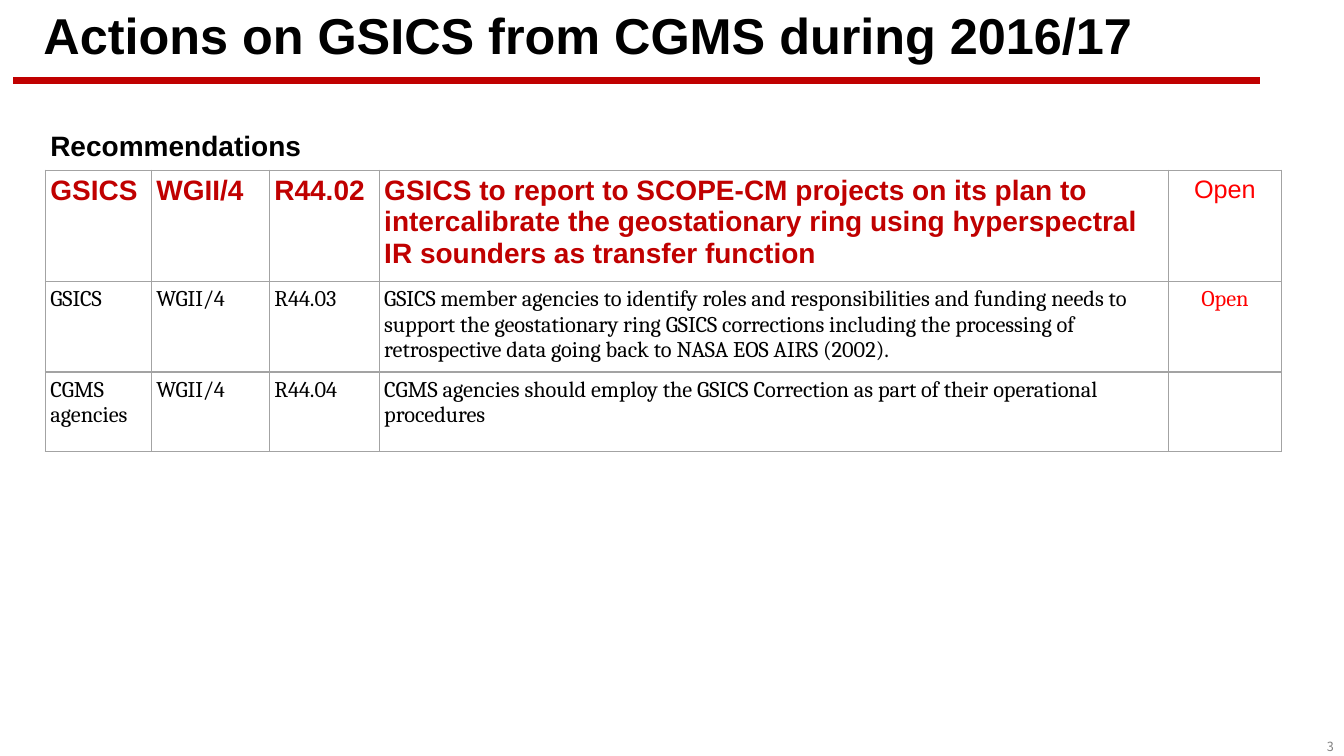
from collections import namedtuple
from lxml import etree
from pptx import Presentation, util as u
from pptx.dml import color
from pptx.enum import shapes, text
from pptx.oxml import ns

Box = namedtuple("Box", "left top width height")
Style = namedtuple("Style", "size font color bold")

SLIDE_WIDTH, SLIDE_HEIGHT = u.Inches(13.33), u.Inches(7.5)
GRID = 100
RED, BRIGHT_RED, BLACK, GREY, BORDER = "C00000", "FF0000", "000000", "808080", "A3A3A3"

HEADING = Style(36, "Arial", BLACK, True)
CAPTION = Style(20, "Arial", BLACK, True)
NUMBER = Style(9, "Noto Sans CJK KR", GREY, False)
KEY = Style(20, "Arial", RED, True)
KEY_STATUS = Style(18, "Arial", BRIGHT_RED, False)
BODY = Style(16, "Cambria", BLACK, False)
BODY_STATUS = BODY._replace(color=BRIGHT_RED)

COLUMN_WIDTHS = [7.88, 8.78, 8.18, 58.73, 8.4]
ROW_HEIGHTS = [13.87, 11.6, 10.53]
ROW_STYLES = [(KEY, KEY_STATUS), (BODY, BODY_STATUS), (BODY, BODY_STATUS)]
RECOMMENDATIONS = [
    ["GSICS", "WGII/4", "R44.02",
     "GSICS to report to SCOPE-CM projects on its plan to intercalibrate the "
     "geostationary ring using hyperspectral IR sounders as transfer function", "Open"],
    ["GSICS", "WGII/4", "R44.03",
     "GSICS member agencies to identify roles and responsibilities and funding needs to "
     "support the geostationary ring GSICS corrections including the processing of "
     "retrospective data going back to NASA EOS AIRS (2002).", "Open"],
    ["CGMS agencies", "WGII/4", "R44.04",
     "CGMS agencies should employ the GSICS Correction as part of their operational "
     "procedures", ""],
]


def across(columns):
    return round(SLIDE_WIDTH * columns / GRID)


def down(rows):
    return round(SLIDE_HEIGHT * rows / GRID)


def place(box):
    return across(box.left), down(box.top), across(box.width), down(box.height)


def rgb(value):
    return color.RGBColor.from_string(value)


def write(text_frame, words, style, align=text.PP_ALIGN.LEFT):
    text_frame.text = words
    text_frame.word_wrap = True
    paragraph = text_frame.paragraphs[0]
    paragraph.alignment = align
    for target in [paragraph, *paragraph.runs]:
        target.font.size = u.Pt(style.size)
        target.font.name = style.font
        target.font.bold = style.bold
        target.font.color.rgb = rgb(style.color)
    return paragraph


def add_label(slide, box, words, style, align=text.PP_ALIGN.LEFT):
    label = slide.shapes.add_textbox(*place(box))
    write(label.text_frame, words, style, align)


def border_cell(cell):
    properties = cell._tc.get_or_add_tcPr()
    for position, side in enumerate(["a:lnL", "a:lnR", "a:lnT", "a:lnB"]):
        line = etree.Element(ns.qn(side), w=str(u.Pt(1)))
        fill = etree.SubElement(line, ns.qn("a:solidFill"))
        etree.SubElement(fill, ns.qn("a:srgbClr"), val=BORDER)
        properties.insert(position, line)


def add_header(slide, box):
    title = slide.shapes.title
    title.left, title.top, title.width, title.height = place(
        Box(box.left + 1.5, box.top, box.width - 6.5, box.height - 1.6))
    title.text_frame.auto_size = text.MSO_AUTO_SIZE.NONE
    title.text_frame.vertical_anchor = text.MSO_ANCHOR.MIDDLE
    paragraph = write(title.text_frame, "Actions on GSICS from CGMS during 2016/17", HEADING)
    paragraph.line_spacing = 0.9

    bottom = down(box.top + box.height)
    rule = slide.shapes.add_connector(
        shapes.MSO_CONNECTOR.STRAIGHT, across(box.left), bottom,
        across(box.left + box.width), bottom)
    rule.line.color.rgb = rgb(RED)
    rule.line.width = u.Pt(4.5)
    etree.SubElement(rule._element.spPr, ns.qn("a:effectLst"))


def add_recommendations(slide, box):
    add_label(slide, Box(box.left, box.top, 32.78, 5.87), "Recommendations", CAPTION)
    table_box = Box(box.left + 0.38, box.top + 6.13, sum(COLUMN_WIDTHS), sum(ROW_HEIGHTS))
    table = slide.shapes.add_table(
        len(ROW_HEIGHTS), len(COLUMN_WIDTHS), *place(table_box)).table
    table.first_row = table.horz_banding = False
    for column, width in zip(table.columns, COLUMN_WIDTHS):
        column.width = across(width)
    for row, height, entries, styles in zip(
            table.rows, ROW_HEIGHTS, RECOMMENDATIONS, ROW_STYLES):
        row.height = down(height)
        for index, (cell, words) in enumerate(zip(row.cells, entries)):
            is_status = index == len(entries) - 1
            align = text.PP_ALIGN.CENTER if is_status else text.PP_ALIGN.LEFT
            cell.fill.background()
            cell.margin_left = cell.margin_right = u.Inches(0.05)
            cell.margin_top = cell.margin_bottom = u.Inches(0.05)
            write(cell.text_frame, words, styles[is_status], align)
            border_cell(cell)


def add_slide_number(slide, box):
    add_label(slide, box, "3", NUMBER, text.PP_ALIGN.RIGHT)


def main():
    presentation = Presentation()
    presentation.slide_width, presentation.slide_height = SLIDE_WIDTH, SLIDE_HEIGHT
    slide = presentation.slides.add_slide(presentation.slide_layouts[5])
    add_header(slide, Box(0.98, 1.07, 92.77, 9.6))
    add_slide_number(slide, Box(91.43, 97.07, 8.55, 3.33))
    add_recommendations(slide, Box(3, 16.4, 92.35, 42.13))
    presentation.save("out.pptx")


if __name__ == "__main__":
    main()
